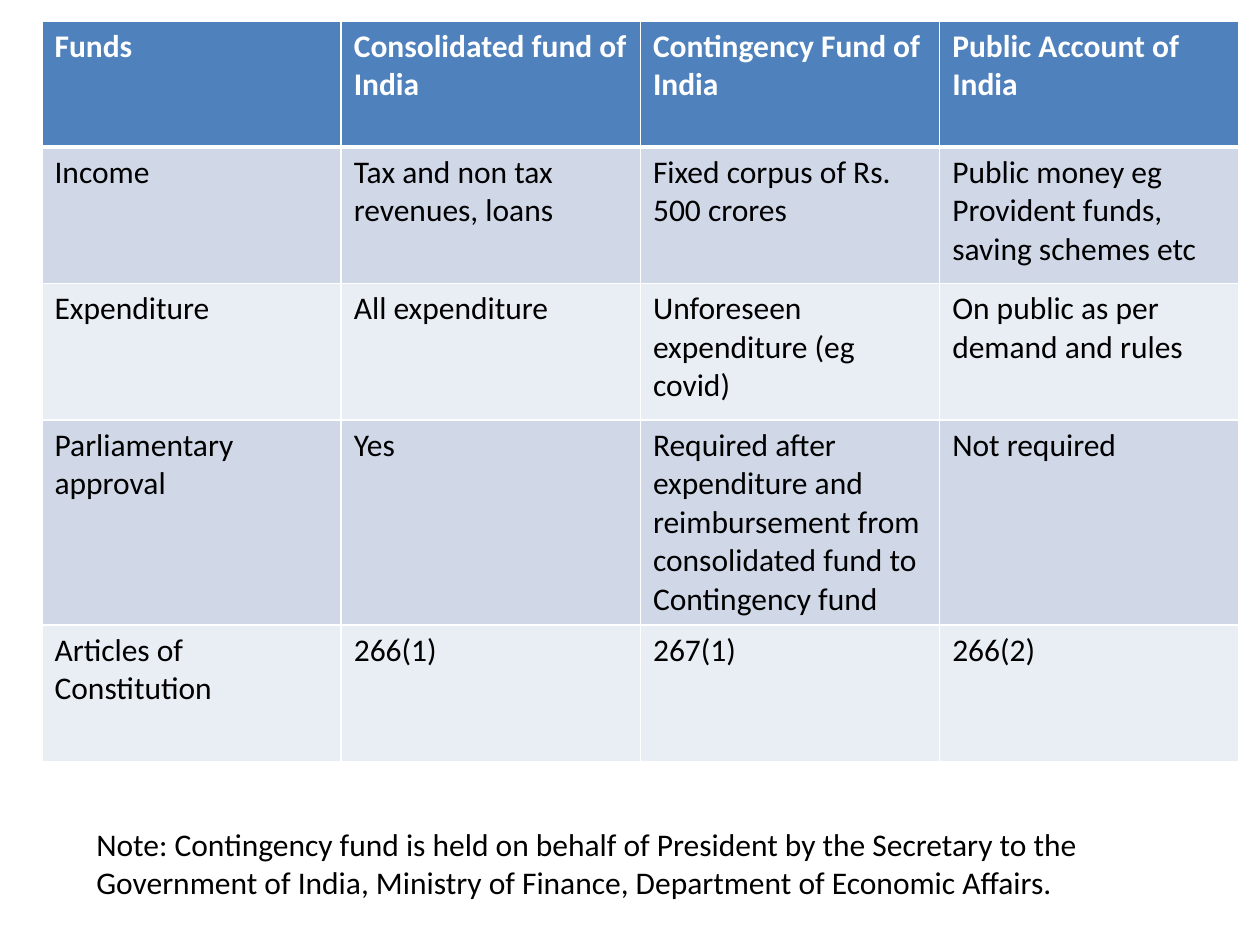
from lxml import etree
from pptx import Presentation
from pptx import util as u
from pptx.dml.color import RGBColor
from pptx.enum import text
from pptx.oxml.ns import qn

Pt = u.Pt
FONT, SIZE = "Calibri", 18
WHITE, BLACK = "FFFFFF", "000000"
HEADER_FILL, BAND_FILLS = "4F81BD", ("D0D8E8", "E9EDF4")

FUNDS = [
    ["Funds", "Consolidated fund of India", "Contingency Fund of India",
     "Public Account of India"],
    ["Income", "Tax and non tax revenues, loans", "Fixed corpus of Rs. 500 crores",
     "Public money eg Provident funds, saving schemes etc"],
    ["Expenditure", "All expenditure", "Unforeseen expenditure (eg covid)",
     "On public as per demand and rules"],
    ["Parliamentary approval", "Yes",
     "Required after expenditure and reimbursement from consolidated fund "
     "to Contingency fund", "Not required"],
    ["Articles of Constitution", "266(1)", "267(1)", "266(2)"],
]
NOTE = ("Note: Contingency fund is held on behalf of President by the Secretary to the "
        "Government of India, Ministry of Finance, Department of Economic Affairs.")


def rgb(color):
    return RGBColor.from_string(color)


def write(tf, content, color, bold=False):
    tf.text = content
    for r in tf.paragraphs[0].runs:
        r.font.name, r.font.size = FONT, Pt(SIZE)
        r.font.bold = bold
        r.font.color.rgb = rgb(color)


def set_borders(cell, widths):
    """Draw white borders; widths are in the order left, right, top, bottom."""
    tc_pr = cell._tc.get_or_add_tcPr()
    for i, (side, width) in enumerate(zip(("lnL", "lnR", "lnT", "lnB"), widths)):
        ln = etree.Element(qn("a:" + side), w=str(Pt(width)))
        fill = etree.SubElement(ln, qn("a:solidFill"))
        etree.SubElement(fill, qn("a:srgbClr"), val=WHITE)
        tc_pr.insert(i, ln)  # borders come before the cell fill


def add_funds_table(s, left, top, width, header_height, row_height):
    n_rows, n_cols = len(FUNDS), len(FUNDS[0])
    height = header_height + row_height * (n_rows - 1)
    table = s.shapes.add_table(n_rows, n_cols, Pt(left), Pt(top),
                               Pt(width), Pt(height)).table
    for col in table.columns:
        col.width = Pt(width / n_cols)
    for i, row in enumerate(FUNDS):
        header = i == 0
        table.rows[i].height = Pt(header_height if header else row_height)
        for j, content in enumerate(row):
            cell = table.cell(i, j)
            cell.fill.solid()
            cell.fill.fore_color.rgb = rgb(HEADER_FILL if header else BAND_FILLS[(i - 1) % 2])
            write(cell.text_frame, content, WHITE if header else BLACK, header)
            # The header is set off by a thicker rule
            set_borders(cell, (1, 1, 3 if i == 1 else 1, 3 if header else 1))


def add_note(s, left, top, width, height):
    tf = s.shapes.add_textbox(Pt(left), Pt(top), Pt(width), Pt(height)).text_frame
    tf.word_wrap = True
    tf.auto_size = text.MSO_AUTO_SIZE.SHAPE_TO_FIT_TEXT
    write(tf, NOTE, BLACK)


def main():
    prs = Presentation()
    prs.slide_width, prs.slide_height = Pt(720), Pt(540)
    s = prs.slides.add_slide(prs.slide_layouts[6])
    # Comparison of the three funds
    add_funds_table(s, 24, 12, 684, 72, 78)
    # Note under the table
    add_note(s, 48, 468, 648, 51)
    prs.save("out.pptx")


if __name__ == "__main__":
    main()
